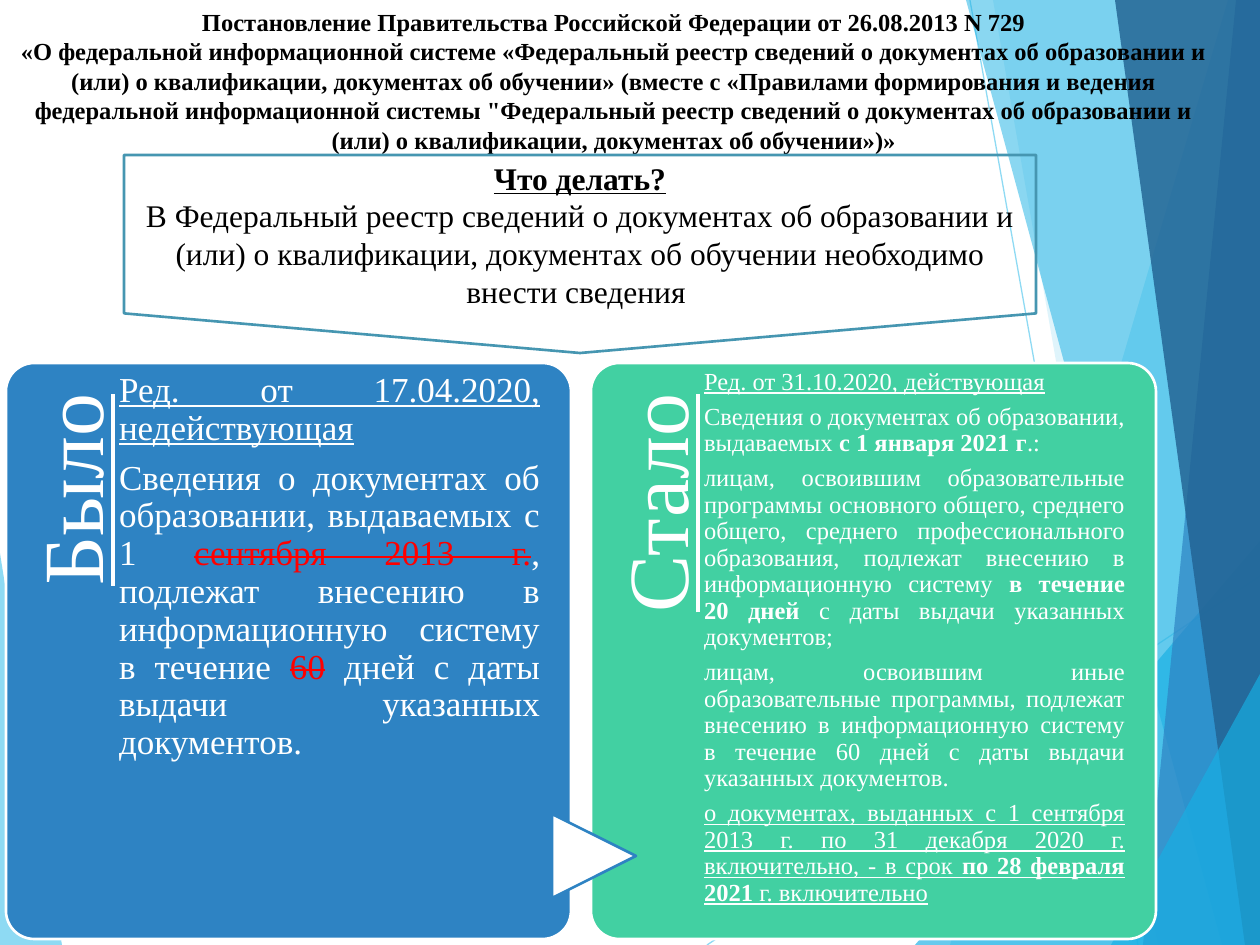
from lxml import etree
from pptx import Presentation
from pptx import util as u
from pptx.dml import color
from pptx.enum import shapes, text
from pptx.oxml import ns

PX = 914400 / 126
WIDE, HIGH = 1260, 945
FACE = "Times New Roman"
SHAPE = shapes.MSO_SHAPE
MID, RIGHT, FULL = text.PP_ALIGN.CENTER, text.PP_ALIGN.RIGHT, text.PP_ALIGN.JUSTIFY
BOLD, UNDER = {"bold": True}, {"underline": True}
GONE = {"color": "FF0000", "strike": True}

WINGS = [
    ("5FCBEF", 36, [(1228, 0), (950, HIGH), (WIDE, HIGH), (WIDE, 0)]),
    ("5FCBEF", 20, [(993, 0), (1158, HIGH), (WIDE, HIGH), (WIDE, 0)]),
    ("17B0E4", 66, [(915, HIGH), (WIDE, 541), (WIDE, HIGH)]),
    ("17B0E4", 50, [(966, 0), (1222, HIGH), (WIDE, HIGH), (WIDE, 0)]),
    ("2E83C3", 70, [(1236, 0), (1143, HIGH), (WIDE, HIGH), (WIDE, 0)]),
    ("226292", 82, [(1115, 0), (1245, HIGH), (WIDE, HIGH), (WIDE, 0)]),
    ("17B0E4", 66, [(1111, HIGH), (WIDE, 674), (WIDE, HIGH)]),
]
RAYS = [(707, HIGH, WIDE, 576), (970, 0, 1138, HIGH)]

TITLE = [
    "Постановление Правительства Российской Федерации от 26.08.2013 N 729",
    "«О федеральной информационной системе «Федеральный реестр сведений о документах "
    "об образовании и (или) о квалификации, документах об обучении» (вместе с «Правилами "
    "формирования и ведения федеральной информационной системы \"Федеральный реестр "
    "сведений о документах об образовании и (или) о квалификации, документах об обучении»)»",
]
TASK = [
    [("Что делать?", {**BOLD, **UNDER})],
    [("В Федеральный реестр сведений о документах об образовании и (или) о квалификации, "
      "документах об обучении необходимо внести сведения ", {})],
]
OLD = [
    [("Ред. от 17.04.2020, недействующая", UNDER)],
    [("Сведения о документах об образовании, выдаваемых с 1 ", {}),
     ("сентября 2013 г.", GONE),
     (", подлежат внесению в информационную систему в течение ", {}),
     ("60", GONE),
     (" дней с даты выдачи указанных документов.", {})],
]
NEW = [
    [("Ред. от 31.10.2020, действующая", UNDER)],
    [("Сведения о документах об образовании, выдаваемых ", {}),
     ("с 1 января 2021 г", BOLD), (".:", {})],
    [("лицам, освоившим образовательные программы основного общего, среднего общего, "
      "среднего профессионального образования, подлежат внесению в информационную систему ", {}),
     ("в течение 20 дней ", BOLD), ("с даты выдачи указанных документов;", {})],
    [("лицам, освоившим иные образовательные программы, подлежат внесению в информационную "
      "систему в течение 60 дней с даты выдачи указанных документов.", {})],
    [("о документах, выданных с 1 сентября 2013 г. по 31 декабря 2020 г. включительно, "
      "- в срок ", UNDER),
     ("по 28 февраля 2021 ", {**BOLD, **UNDER}), ("г. включительно", UNDER)],
]


def px(*nums):
    return [u.Emu(round(n * PX)) for n in nums]


def rgb(code):
    return color.RGBColor.from_string(code)


def apply(item, form):
    for key, val in form.items():
        setattr(item, key, val)


def fade(shape, part):
    for node in shape._element.spPr.iter(ns.qn("a:srgbClr")):
        etree.SubElement(node, ns.qn("a:alpha")).set("val", str(part * 1000))


def paint(shape, fill=None, line=None, width=1.5):
    shape.shadow.inherit = False
    if fill:
        shape.fill.solid()
        shape.fill.fore_color.rgb = rgb(fill)
    else:
        shape.fill.background()
    if line:
        shape.line.color.rgb = rgb(line)
        shape.line.width = u.Pt(width)
    else:
        shape.line.fill.background()


def write(shape, paras, size, hue, align, pad=(13, 6, 13, 6), **rest):
    frame = shape.text_frame
    sides = ("margin_left", "margin_top", "margin_right", "margin_bottom")
    apply(frame, {"word_wrap": True, "vertical_anchor": text.MSO_ANCHOR.TOP})
    apply(frame, dict(zip(sides, px(*pad))))
    for i, runs in enumerate(paras):
        para = frame.paragraphs[0] if i == 0 else frame.add_paragraph()
        apply(para, {"alignment": align, **rest})
        for words, form in runs:
            run = para.add_run()
            run.text = words
            form = dict(form)
            run.font.color.rgb = rgb(form.pop("color", hue))
            if form.pop("strike", False):
                run._r.get_or_add_rPr().set("strike", "sngStrike")
            apply(run.font, {"name": FACE, "size": u.Pt(size), **form})


def add_wing(slide, hue, part, spots):
    pen = slide.shapes.build_freeform(*spots[0], scale=PX)
    pen.add_line_segments(spots[1:], close=True)
    wing = pen.convert_to_shape()
    paint(wing, hue)
    fade(wing, part)


def add_ray(slide, ends):
    ray = slide.shapes.add_connector(shapes.MSO_CONNECTOR.STRAIGHT, *px(*ends))
    ray.line.color.rgb = rgb("5FCBEF")
    ray.line.width = u.Pt(0.75)
    fade(ray, 70)
    etree.SubElement(ray._element.spPr, ns.qn("a:effectLst"))


def add_back(slide):
    add_wing(slide, "5FCBEF", 70, [(0, 553), (62, HIGH), (0, HIGH)])
    for ends in RAYS:
        add_ray(slide, ends)
    for wing in WINGS:
        add_wing(slide, *wing)


def add_title(slide, x, y, w, h):
    box = slide.shapes.add_textbox(*px(x, y, w, h))
    write(box, [[(TITLE[0], BOLD)]], 14, "000000", MID)
    para = box.text_frame.paragraphs[0]
    para.add_line_break()
    run = para.add_run()
    run.text = TITLE[1]
    run.font.color.rgb = rgb("000000")
    apply(run.font, {"name": FACE, "size": u.Pt(14), "bold": True})


def add_task(slide, x, y, w, h):
    sign = slide.shapes.add_shape(SHAPE.FLOWCHART_OFFPAGE_CONNECTOR, *px(x, y, w, h))
    paint(sign, None, "4696B1")
    write(sign, TASK, 18, "000000", MID)
    sign.text_frame.vertical_anchor = text.MSO_ANCHOR.MIDDLE


def add_card(slide, x, y, w, h, hue, name, paras, size, top):
    card = slide.shapes.add_shape(SHAPE.ROUNDED_RECTANGLE, *px(x, y, w, h))
    card.adjustments[0] = 0.05
    paint(card, hue, "FFFFFF")
    long, thick = 472, 113
    label = slide.shapes.add_textbox(*px(x - 179, y + 180, long, thick))
    label.rotation = 270
    write(label, [[(name, UNDER)]], 49, "FFFFFF", RIGHT, (0, 23, 30, 0), line_spacing=0.9)
    body = slide.shapes.add_textbox(*px(x + 113, y, 421, h))
    write(body, paras, size, "FFFFFF", FULL, (0, top, 0, 0),
          line_spacing=0.9, space_after=u.Pt(size * 0.35))


def add_arrow(slide, x, y, side):
    arrow = slide.shapes.add_shape(SHAPE.FLOWCHART_EXTRACT, *px(x, y, side, side))
    arrow.rotation = 90
    paint(arrow, "FFFFFF", "2E83C3")


def main():
    deck = Presentation()
    deck.slide_width, deck.slide_height = px(WIDE, HIGH)
    slide = deck.slides.add_slide(deck.slide_layouts[6])
    add_back(slide)
    add_title(slide, 3, 1, 1222, 181)
    add_card(slide, 6, 363, 565, 576, "2E83C3", "Было", OLD, 20, 9)
    add_card(slide, 591, 363, 565, 576, "42D0A2", "Стало", NEW, 14, 6)
    add_arrow(slide, 552, 814, 84)
    add_task(slide, 124, 155, 912, 198)
    deck.save("out.pptx")


if __name__ == "__main__":
    main()
